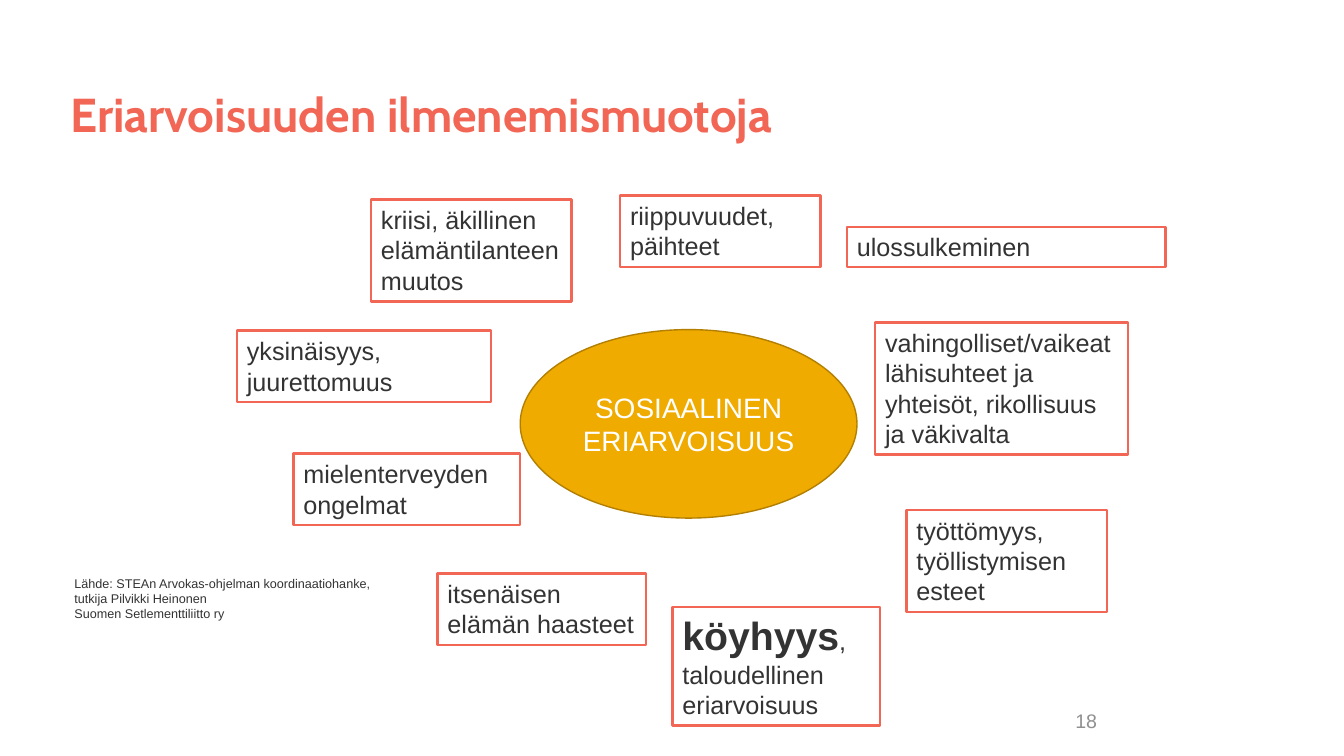
from pptx import Presentation
from pptx.dml.color import RGBColor
from pptx.enum.shapes import MSO_SHAPE
from pptx.enum.text import MSO_ANCHOR, MSO_AUTO_SIZE, PP_ALIGN
from pptx.util import Inches, Pt

COLORS = {
    "coral": "F26655",
    "text": "333333",
    "number": "909090",
    "gold": "F0AB00",
    "gold_edge": "B27F00",
    "white": "FFFFFF",
}

# Left, top, width, height and text of each framed theme
THEMES = [
    (3.68, 1.98, 1.99, 1.01, "kriisi, äkillinen elämäntilanteen muutos"),
    (6.15, 1.94, 1.99, 0.71, "riippuvuudet, päihteet"),
    (8.4, 2.25, 3.16, 0.4, "ulossulkeminen"),
    (8.68, 3.2, 2.51, 1.31,
     "vahingolliset/vaikeat lähisuhteet ja yhteisöt, rikollisuus ja väkivalta"),
    (8.99, 5.06, 1.99, 1.01, "työttömyys, työllistymisen esteet"),
    (4.34, 5.69, 2.07, 0.71, "itsenäisen elämän haasteet"),
    (2.91, 4.5, 2.25, 0.71, "mielenterveyden ongelmat"),
    (2.35, 3.28, 2.52, 0.71, "yksinäisyys, juurettomuus"),
]

SOURCE_LINES = [
    "Lähde: STEAn Arvokas-ohjelman koordinaatiohanke,",
    "tutkija Pilvikki Heinonen",
    "Suomen Setlementtiliitto ry",
]


def color(name):
    return RGBColor.from_string(COLORS[name])


def add_span(para, text, size, tone="text", bold=False, font="Arial"):
    span = para.add_run()
    span.text = text
    span.font.name = font
    span.font.size = Pt(size)
    span.font.bold = bold
    span.font.color.rgb = color(tone)


def prepare_text(box, anchor=MSO_ANCHOR.TOP, align=PP_ALIGN.LEFT, grow=False):
    """Set up the text frame and return its first paragraph."""
    frame = box.text_frame
    frame.word_wrap = True
    frame.vertical_anchor = anchor
    frame.auto_size = MSO_AUTO_SIZE.SHAPE_TO_FIT_TEXT if grow else MSO_AUTO_SIZE.NONE
    para = frame.paragraphs[0]
    para.alignment = align
    return para


def add_text_box(page, place, **layout):
    box = page.shapes.add_textbox(*map(Inches, place))
    return box, prepare_text(box, **layout)


def add_outlined_shape(page, kind, place, edge, width, fill=None):
    shape = page.shapes.add_shape(kind, *map(Inches, place))
    shape.shadow.inherit = False
    if fill:
        shape.fill.solid()
        shape.fill.fore_color.rgb = color(fill)
    else:
        shape.fill.background()
    shape.line.color.rgb = color(edge)
    shape.line.width = Pt(width)
    return shape


def add_theme(page, place):
    box = add_outlined_shape(page, MSO_SHAPE.RECTANGLE, place, "coral", 1.75)
    return prepare_text(box, grow=True)


def main():
    deck = Presentation()
    deck.slide_width, deck.slide_height = Inches(13.33), Inches(7.5)
    page = deck.slides.add_slide(deck.slide_layouts[6])

    # Title and page number
    _, para = add_text_box(page, (0.6, 0.4, 10.85, 1.45), anchor=MSO_ANCHOR.MIDDLE)
    para.space_after = Pt(7)
    add_span(para, "Eriarvoisuuden ilmenemismuotoja", 34, "coral", True, "Cabin")
    _, para = add_text_box(page, (8.73, 6.95, 2.25, 0.4),
                           anchor=MSO_ANCHOR.MIDDLE, align=PP_ALIGN.RIGHT)
    add_span(para, "18", 14, "number")

    # Central topic
    topic = add_outlined_shape(page, MSO_SHAPE.OVAL, (5.16, 3.27, 3.34, 1.87),
                               "gold_edge", 1, "gold")
    para = prepare_text(topic, MSO_ANCHOR.MIDDLE, PP_ALIGN.CENTER)
    add_span(para, "SOSIAALINEN ERIARVOISUUS", 20, "white")

    # Themes around the topic
    for *place, text in THEMES:
        add_span(add_theme(page, place), text, 18)

    # Poverty, the emphasised theme
    para = add_theme(page, (6.67, 6.02, 2.06, 1.18))
    add_span(para, "köyhyys", 28, bold=True)
    add_span(para, ", taloudellinen eriarvoisuus", 18)

    # Source
    box, para = add_text_box(page, (0.64, 5.66, 3.34, 0.56), grow=True)
    for index, line in enumerate(SOURCE_LINES):
        if index:
            para = box.text_frame.add_paragraph()
        add_span(para, line, 9)

    deck.save("out.pptx")


if __name__ == "__main__":
    main()
